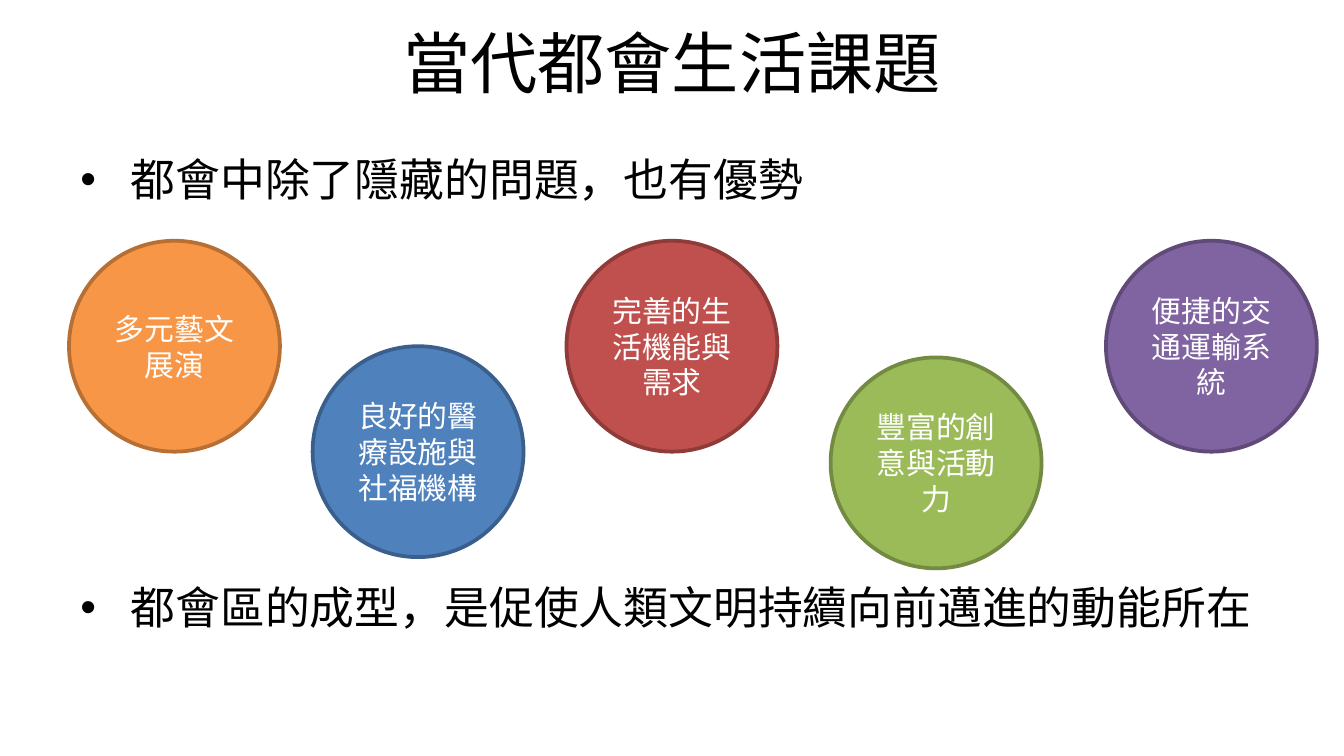
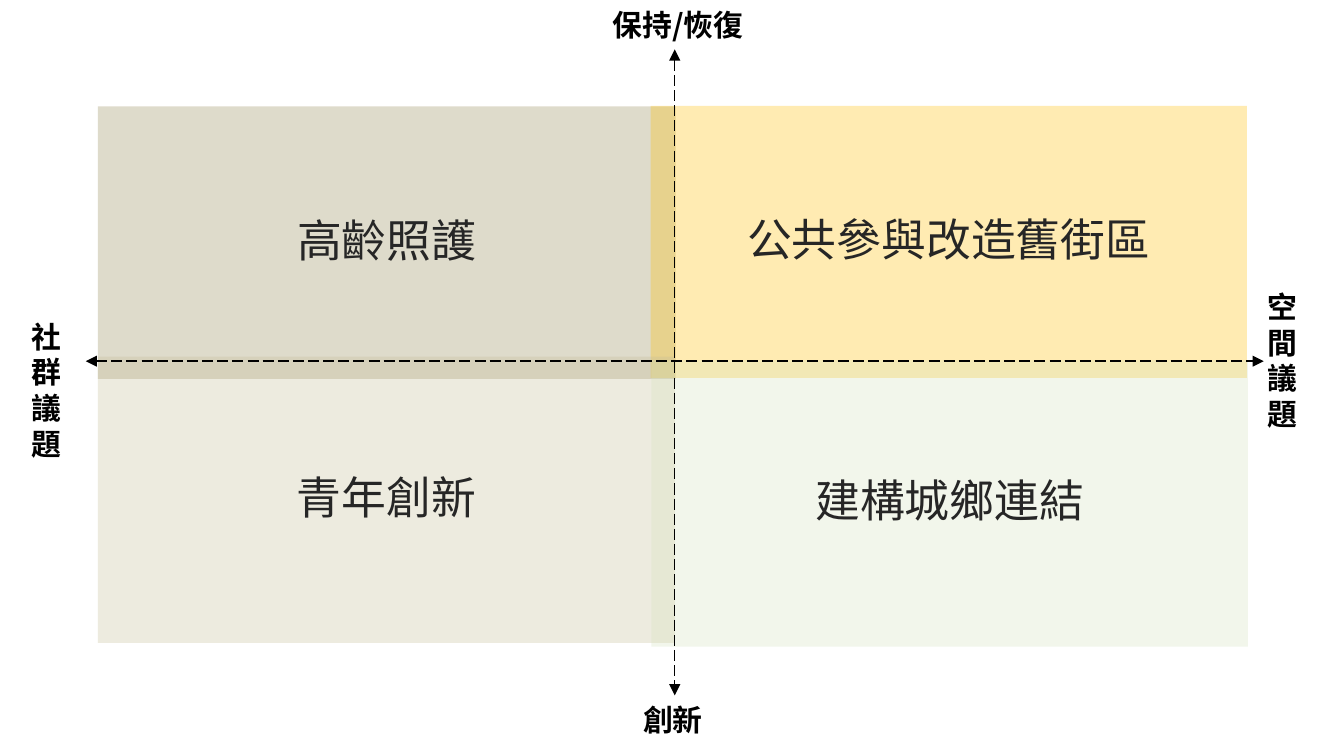
import pptx
import pptx.util
import pptx.dml.color
import pptx.enum.dml
import pptx.enum.shapes
import pptx.enum.text
import pptx.oxml.ns
from lxml import etree

Pt = pptx.util.Pt
RGB = pptx.dml.color.RGBColor.from_string
Shape = pptx.enum.shapes.MSO_SHAPE
Anchor = pptx.enum.text.MSO_ANCHOR
Align = pptx.enum.text.PP_ALIGN
qn = pptx.oxml.ns.qn

FONT = "Noto Sans CJK SC"
COLORS = {
    "black": "000000", "white": "FFFFFF", "ink": "262626",
    "orange": "F79646", "orange_edge": "B76F34",
    "blue": "4F81BD", "blue_edge": "3A5F8C",
    "red": "C0504D", "red_edge": "8E3B39",
    "green": "9BBB59", "green_edge": "738A42",
    "purple": "8064A2", "purple_edge": "5F4A78",
    "olive": "948A54", "gold": "FFC000", "tan": "C4BD97", "mint": "D7E4BD",
}
TITLE = {"size": Pt(36)}
BODY = {"size": Pt(24)}
CIRCLE = {"size": Pt(16)}
AXIS = {"size": Pt(16), "bold": True}


def write(shape, lines, font_format, color, para_format, anchor=Anchor.MIDDLE):
    """Fill a shape with one paragraph per line and return the paragraphs."""
    frame = shape.text_frame
    frame.word_wrap = True
    frame.vertical_anchor = anchor
    frame.text = "\n".join(lines)
    for para in frame.paragraphs:
        for name, value in para_format.items():
            setattr(para, name, value)
        span = para.runs[0]
        for name, value in font_format.items():
            setattr(span.font, name, value)
        span.font.color.rgb = RGB(COLORS[color])
        span.font.name = FONT
        etree.SubElement(span.font._element, qn("a:ea"), typeface=FONT)
    return frame.paragraphs


def add_filled(page, kind, place, color):
    shape = page.shapes.add_shape(kind, *map(Pt, place))
    shape.shadow.inherit = False
    shape.fill.solid()
    shape.fill.fore_color.rgb = RGB(COLORS[color])
    return shape


deck = pptx.Presentation()
deck.slide_width, deck.slide_height = Pt(720), Pt(405)
blank = deck.slide_layouts[6]

# Slide 1: advantages of city life
page = deck.slides.add_slide(blank)
title = page.shapes.add_textbox(Pt(36), Pt(5), Pt(648), Pt(56))
write(title, ["當代都會生活課題"], TITLE, "black", {"alignment": Align.CENTER})

body = page.shapes.add_textbox(Pt(36), Pt(77.8), Pt(648), Pt(306))
points = ["都會中除了隱藏的問題，也有優勢", "都會區的成型，是促使人類文明持續向前邁進的動能所在"]
paras = write(body, points, BODY, "black", {}, Anchor.TOP)
for para in paras:
    props = para._p.get_or_add_pPr()
    props.set("marL", str(Pt(27)))
    props.set("indent", str(-Pt(27)))
    etree.SubElement(props, qn("a:buFont"), typeface="Arial")
    etree.SubElement(props, qn("a:buChar"), char="•")
paras[1].space_before = Pt(200.5)

DIAMETER = 113
advantages = [
    ("便捷的交通運輸系統", "purple", 592.5, 129),
    ("豐富的創意與活動力", "green", 445, 191.5),
    ("完善的生活機能與需求", "red", 303.5, 129),
    ("良好的醫療設施與社福機構", "blue", 167.5, 185.5),
    ("多元藝文展演", "orange", 37, 129),
]
for text, color, left, top in advantages:
    circle = add_filled(page, Shape.OVAL, (left, top, DIAMETER, DIAMETER), color)
    circle.line.color.rgb = RGB(COLORS[color + "_edge"])
    circle.line.width = Pt(2)
    write(circle, [text], CIRCLE, "white", {"alignment": Align.CENTER})

# Slide 2: four quadrants of issues
page = deck.slides.add_slide(blank)
quadrants = [
    ("高齡照護", "olive", (52.5, 57, 309.5, 146)),
    ("公共參與改造舊街區", "gold", (348.5, 56.75, 319.5, 145.75)),
    ("青年創新", "tan", (52.5, 191, 309, 153.5)),
    ("建構城鄉連結", "mint", (349, 193, 319.5, 153.5)),
]
for text, color, place in quadrants:
    area = add_filled(page, Shape.RECTANGLE, place, color)
    area.line.fill.background()
    tint = area._element.spPr.find(qn("a:solidFill"))[0]
    etree.SubElement(tint, qn("a:alpha"), val="30000")
    write(area, [text], BODY, "ink", {"alignment": Align.CENTER, "line_spacing": Pt(25)})

for ends in [(46, 193.5, 677, 193.5), (361.5, 26.5, 361.5, 372.5)]:
    axis = page.shapes.add_connector(pptx.enum.shapes.MSO_CONNECTOR.STRAIGHT, *map(Pt, ends))
    axis.line.color.rgb = RGB(COLORS["black"])
    axis.line.width = Pt(0.75)
    axis.line.dash_style = pptx.enum.dml.MSO_LINE.LONG_DASH
    for end in ("a:headEnd", "a:tailEnd"):
        etree.SubElement(axis.line._get_or_add_ln(), qn(end), type="triangle")
    etree.SubElement(axis._element.spPr, qn("a:effectLst"))

axis_labels = [
    (["創新"], (337.5, 372.5, 60.5, 26.5)),
    (["保持/恢復"], (321, 0, 96, 26.5)),
    (["空間議題"], (672, 151, 28, 85)),
    (["社群", "議題"], (10, 167, 32.5, 85)),
]
for lines, place in axis_labels:
    label = page.shapes.add_textbox(*map(Pt, place))
    write(label, lines, AXIS, "black", {}, Anchor.TOP)
    label.text_frame.auto_size = pptx.enum.text.MSO_AUTO_SIZE.SHAPE_TO_FIT_TEXT

deck.save("out.pptx")
